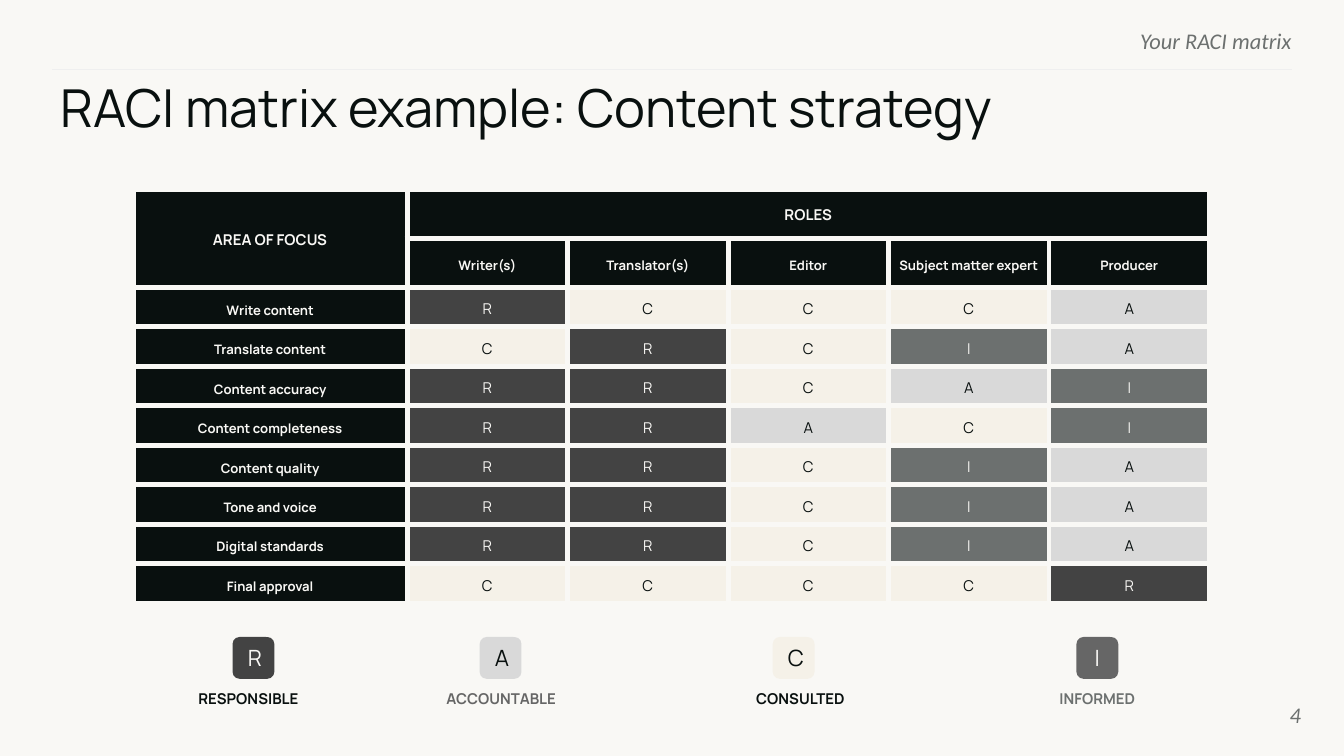
"""Build a RACI matrix slide for a content strategy."""
from lxml import etree
from pptx import Presentation
from pptx.dml.color import RGBColor
from pptx.enum.shapes import MSO_CONNECTOR, MSO_SHAPE
from pptx.enum.text import MSO_ANCHOR, MSO_AUTO_SIZE, PP_ALIGN
from pptx.oxml.ns import qn
from pptx.util import Pt

LEFT, CENTER, RIGHT = PP_ALIGN.LEFT, PP_ALIGN.CENTER, PP_ALIGN.RIGHT
TOP, MIDDLE = MSO_ANCHOR.TOP, MSO_ANCHOR.MIDDLE
NO_FIT = MSO_AUTO_SIZE.NONE
ROUNDED = MSO_SHAPE.ROUNDED_RECTANGLE
STRAIGHT = MSO_CONNECTOR.STRAIGHT

COLORS = {
    "paper": "F9F8F5", "ink": "09100F", "charcoal": "434343", "slate": "6C706F",
    "gray": "666666", "silver": "D9D9D9", "cream": "F5F1E8", "rule": "EFEFEF",
}
CODES = {
    "R": ("charcoal", "paper"), "A": ("silver", "ink"),
    "C": ("cream", "ink"), "I": ("slate", "paper"),
}
ROLES = ["Writer(s)", "Translator(s)", "Editor", "Subject matter expert", "Producer"]
AREAS = [
    ("Write content", "RCCCA"),
    ("Translate content", "CRCIA"),
    ("Content accuracy", "RRCAI"),
    ("Content completeness", "RRACI"),
    ("Content quality", "RRCIA"),
    ("Tone and voice", "RRCIA"),
    ("Digital standards", "RRCIA"),
    ("Final approval", "CCCCR"),
]
LEGEND = [
    ("R", "RESPONSIBLE", "charcoal", "ink", 124.6, 95, 76.3),
    ("A", "ACCOUNTABLE", "silver", "gray", 257, 223.9, 89.3),
    ("C", "CONSULTED", "cream", "ink", 414, 394.6, 68.4),
    ("I", "INFORMED", "gray", "slate", 576.7, 558, 59.8),
]


def rgb(name):
    return RGBColor.from_string(COLORS[name])


def write(tf, text, size=8, color="ink", font="Manrope", bold=False, italic=False,
          align=CENTER, spacing=None, after=None):
    p = tf.paragraphs[0]
    p.alignment = align
    p.line_spacing = spacing
    if after is not None:
        p.space_after = Pt(after)
    r = p.add_run()
    r.text = text
    r.font.name = font
    r.font.size = Pt(size)
    r.font.bold = bold
    r.font.italic = italic
    r.font.color.rgb = rgb(color)


def frame(tf, inset_x=0, inset_y=0, anchor=TOP):
    tf.word_wrap = True
    tf.auto_size = NO_FIT
    tf.margin_left = tf.margin_right = Pt(inset_x)
    tf.margin_top = tf.margin_bottom = Pt(inset_y)
    tf.vertical_anchor = anchor


def add_text(slide, text, box, inset_x=0, inset_y=0, anchor=TOP, **fmt):
    sp = slide.shapes.add_textbox(*map(Pt, box))
    frame(sp.text_frame, inset_x, inset_y, anchor)
    write(sp.text_frame, text, **fmt)


def add_title(slide, text, box):
    sp = slide.shapes.title
    sp.left, sp.top, sp.width, sp.height = map(Pt, box)
    frame(sp.text_frame)
    write(sp.text_frame, text, size=28, align=LEFT, after=10)


def add_rule(slide, x1, x2, y):
    line = slide.shapes.add_connector(STRAIGHT, Pt(x1), Pt(y), Pt(x2), Pt(y))
    line.line.color.rgb = rgb("rule")
    line.line.width = Pt(0.75)
    etree.SubElement(line._element.spPr, qn("a:effectLst"))


def add_chip(slide, code, fill, x, y, size):
    sp = slide.shapes.add_shape(ROUNDED, Pt(x), Pt(y), Pt(size), Pt(size))
    sp.shadow.inherit = False
    sp.fill.solid()
    sp.fill.fore_color.rgb = rgb(fill)
    sp.line.fill.background()
    frame(sp.text_frame, 7.2, 7.2, MIDDLE)
    write(sp.text_frame, code, size=12, color=CODES[code][1])


def style_cell(cell, fill):
    tc_pr = cell._tc.get_or_add_tcPr()
    for side in ("a:lnL", "a:lnR", "a:lnT", "a:lnB"):
        ln = etree.SubElement(tc_pr, qn(side), w=str(Pt(3)))
        solid = etree.SubElement(ln, qn("a:solidFill"))
        etree.SubElement(solid, qn("a:srgbClr"), val=COLORS["paper"])
    cell.fill.solid()
    cell.fill.fore_color.rgb = rgb(fill)
    cell.margin_left = cell.margin_right = Pt(5.76)
    cell.margin_top = cell.margin_bottom = Pt(2.88)
    cell.vertical_anchor = MIDDLE


def add_matrix(slide, x, y):
    widths = [146.8] + [86] * len(ROLES)
    heights = [26.25] * 2 + [21.15] * len(AREAS)
    table = slide.shapes.add_table(len(heights), len(widths), Pt(x), Pt(y),
                                   Pt(sum(widths)), Pt(sum(heights))).table
    table.first_row = table.horz_banding = False
    for column, width in zip(table.columns, widths):
        column.width = Pt(width)
    for row, height in zip(table.rows, heights):
        row.height = Pt(height)
    rows = [["AREA OF FOCUS", "ROLES"] + [""] * 4, [""] + ROLES]
    rows += [[area, *codes] for area, codes in AREAS]
    for i, texts in enumerate(rows):
        for j, text in enumerate(texts):
            cell = table.cell(i, j)
            fill, color = CODES.get(text, ("ink", "paper"))
            style_cell(cell, fill)
            if text in CODES:
                write(cell.text_frame, text, color=color, spacing=1.2)
            elif text:
                size, spacing = (8, 1.09) if i == 0 else (7, 1.33)
                write(cell.text_frame, text, size=size, color=color,
                      bold=True, spacing=spacing)
    table.cell(0, 0).merge(table.cell(1, 0))
    table.cell(0, 1).merge(table.cell(0, len(ROLES)))


def add_legend(slide):
    for code, label, fill, color, chip_x, label_x, width in LEGEND:
        add_chip(slide, code, fill, chip_x, 341.3, 22.4)
        add_text(slide, label, (label_x, 366.5, width, 15), 5, 2.9,
                 color=color, bold=True)


def main():
    prs = Presentation()
    prs.slide_width, prs.slide_height = Pt(720), Pt(405)
    slide = prs.slides.add_slide(prs.slide_layouts[5])
    slide.background.fill.solid()
    slide.background.fill.fore_color.rgb = rgb("paper")
    note = {"size": 12, "color": "slate", "font": "Calibri", "italic": True, "align": RIGHT}
    add_text(slide, "Your RACI matrix", (414.7, 14.4, 277.2, 13), **note)
    add_rule(slide, 28, 692, 37.2)
    add_title(slide, "RACI matrix example: Content strategy", (32.4, 40.3, 556, 36.7))
    add_matrix(slide, 71.3, 101.5)
    add_legend(slide)
    add_text(slide, "4", (653.8, 367.5, 43.2, 31), anchor=MIDDLE, **note)
    prs.save("out.pptx")


if __name__ == "__main__":
    main()
